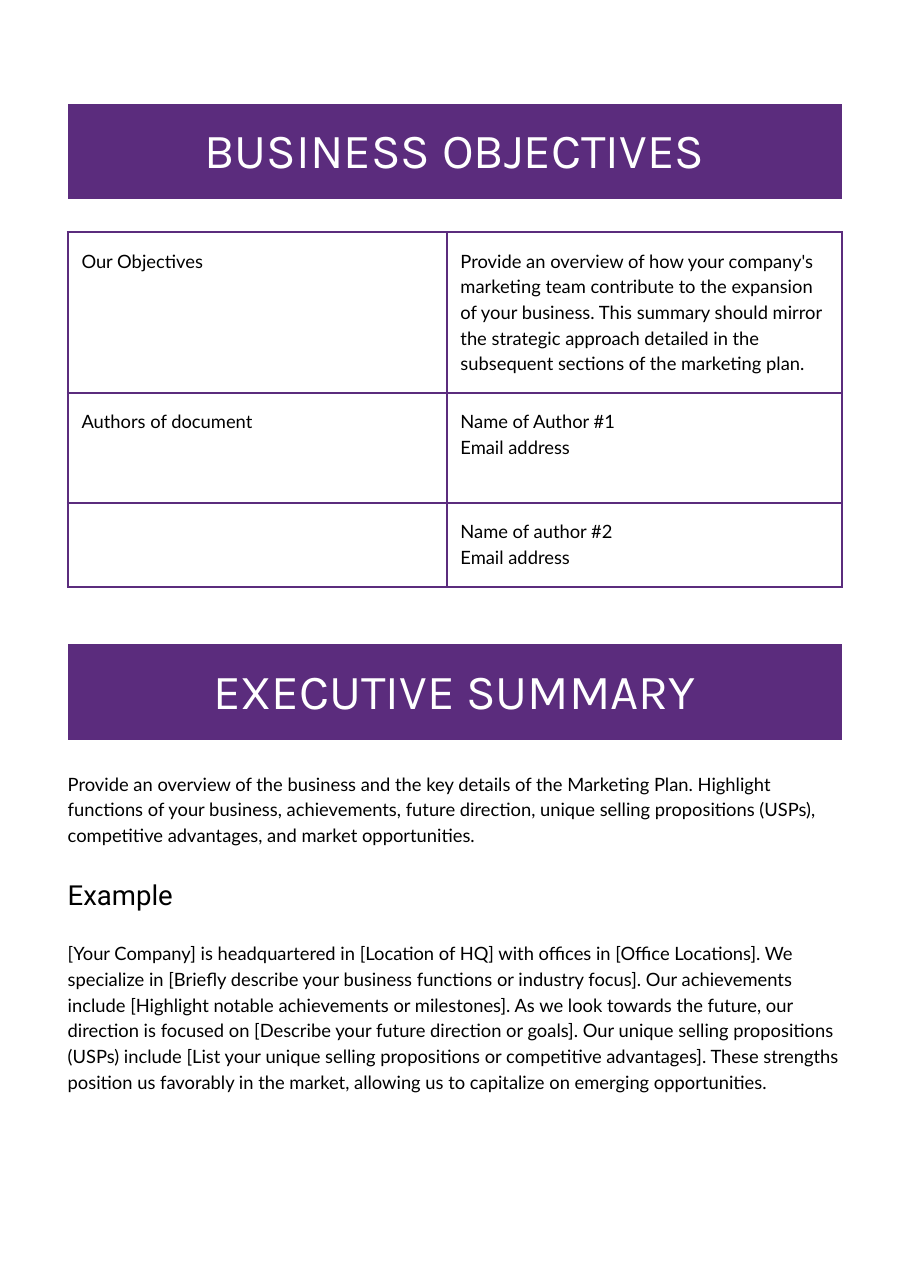
from typing import NamedTuple

from lxml import etree
from pptx import Presentation
from pptx import util as u
from pptx.dml.color import RGBColor
from pptx.enum import text
from pptx.oxml import ns

PX = 4572  # EMU in one px, 200 px to the inch
LEFT, WIDTH = 123, 1405
PURPLE, BLACK, WHITE = "5B2C7D", "000000", "FFFFFF"
LINE_SPACING = 1.4


class Style(NamedTuple):
    font: str
    size: int
    color: str
    align: text.PP_ALIGN = text.PP_ALIGN.LEFT


class Block(NamedTuple):
    top: int
    height: int
    content: str
    style: Style


class Grid(NamedTuple):
    top: int
    columns: list[int]
    rows: list[int]
    margin: int
    style: Style
    cells: list[list[list[str]]]
    fill: str | None = None
    border: str | None = None


BANNER = Style("Karla", 32, WHITE, text.PP_ALIGN.CENTER)
HEADING = Style("Roboto", 18, BLACK)
BODY = Style("Lato", 12, BLACK)


def banner(top: int, title: str) -> Grid:
    return Grid(top, [WIDTH], [174], 16, BANNER, [[[title]]], fill=PURPLE)


OBJECTIVES = Grid(
    422, [688, 717], [291, 200, 153], 25, BODY,
    [
        [["Our Objectives"],
         ["Provide an overview of how your company's marketing team contribute to the "
          "expansion of your business. This summary should mirror the strategic approach "
          "detailed in the subsequent sections of the marketing plan."]],
        [["Authors of document"], ["Name of Author #1", "Email address"]],
        [[], ["Name of author #2", "Email address"]],
    ],
    border=PURPLE)

GRIDS = [
    OBJECTIVES,
    banner(1169, "EXECUTIVE SUMMARY"),
    banner(188, "BUSINESS OBJECTIVES"),
]

PASSAGES = [
    Block(1396, 226,
          "Provide an overview of the business and the key details of the Marketing Plan. "
          "Highlight functions of your business, achievements, future direction, unique "
          "selling propositions (USPs), competitive advantages, and market opportunities.",
          BODY),
    Block(1704, 318,
          "[Your Company] is headquartered in [Location of HQ] with offices in [Office "
          "Locations]. We specialize in [Briefly describe your business functions or "
          "industry focus]. Our achievements include [Highlight notable achievements or "
          "milestones]. As we look towards the future, our direction is focused on "
          "[Describe your future direction or goals]. Our unique selling propositions "
          "(USPs) include [List your unique selling propositions or competitive "
          "advantages]. These strengths position us favorably in the market, allowing us "
          "to capitalize on emerging opportunities.",
          BODY),
    Block(1583, 70, "Example", HEADING),
]


def px(n: int) -> u.Emu:
    return u.Emu(n * PX)


def rgb(color: str) -> RGBColor:
    return RGBColor.from_string(color)


def write(tf, lines: list[str], style: Style) -> None:
    for i, line in enumerate(lines):
        p = tf.add_paragraph() if i else tf.paragraphs[0]
        p.alignment = style.align
        p.line_spacing = u.Pt(round(style.size * LINE_SPACING, 1))
        r = p.add_run()
        r.text = line
        r.font.name = style.font
        r.font.size = u.Pt(style.size)
        r.font.color.rgb = rgb(style.color)


def set_margins(target, margin: int) -> None:
    """Give a text frame or a table cell the same margin on all sides."""
    target.margin_left = target.margin_right = px(margin)
    target.margin_top = target.margin_bottom = px(margin)
    target.vertical_anchor = text.MSO_ANCHOR.TOP


def add_borders(cell, color: str | None, points: float) -> None:
    """Draw the four cell edges, or hide them when there is no color."""
    tc_pr = cell._tc.get_or_add_tcPr()
    for side in ("lnL", "lnR", "lnT", "lnB"):
        ln = etree.SubElement(tc_pr, ns.qn(f"a:{side}"), w=str(u.Pt(points)))
        if color:
            solid = etree.SubElement(ln, ns.qn("a:solidFill"))
            etree.SubElement(solid, ns.qn("a:srgbClr"), val=color)
        else:
            etree.SubElement(ln, ns.qn("a:noFill"))


def set_fill(cell, color: str | None) -> None:
    if color:
        cell.fill.solid()
        cell.fill.fore_color.rgb = rgb(color)
    else:
        cell.fill.background()


def add_grid(s, grid: Grid) -> None:
    frame = s.shapes.add_table(len(grid.rows), len(grid.columns), px(LEFT), px(grid.top),
                               px(WIDTH), px(sum(grid.rows)))
    table = frame.table
    table.first_row = table.horz_banding = False
    for column, width in zip(table.columns, grid.columns):
        column.width = px(width)
    for row, height, entries in zip(table.rows, grid.rows, grid.cells):
        row.height = px(height)
        for cell, lines in zip(row.cells, entries):
            set_margins(cell, grid.margin)
            add_borders(cell, grid.border, 1.5 if grid.border else 0)
            set_fill(cell, grid.fill)
            write(cell.text_frame, lines, grid.style)


def add_passage(s, block: Block) -> None:
    sp = s.shapes.add_textbox(px(LEFT), px(block.top), px(WIDTH), px(block.height))
    tf = sp.text_frame
    tf.word_wrap = True
    set_margins(tf, 0)
    write(tf, [block.content], block.style)


def main() -> None:
    prs = Presentation()
    prs.slide_width, prs.slide_height = px(1652), px(2338)
    s = prs.slides.add_slide(prs.slide_layouts.get_by_name("Blank"))
    for grid in GRIDS:
        add_grid(s, grid)
    for passage in PASSAGES:
        add_passage(s, passage)
    prs.save("out.pptx")


if __name__ == "__main__":
    main()
